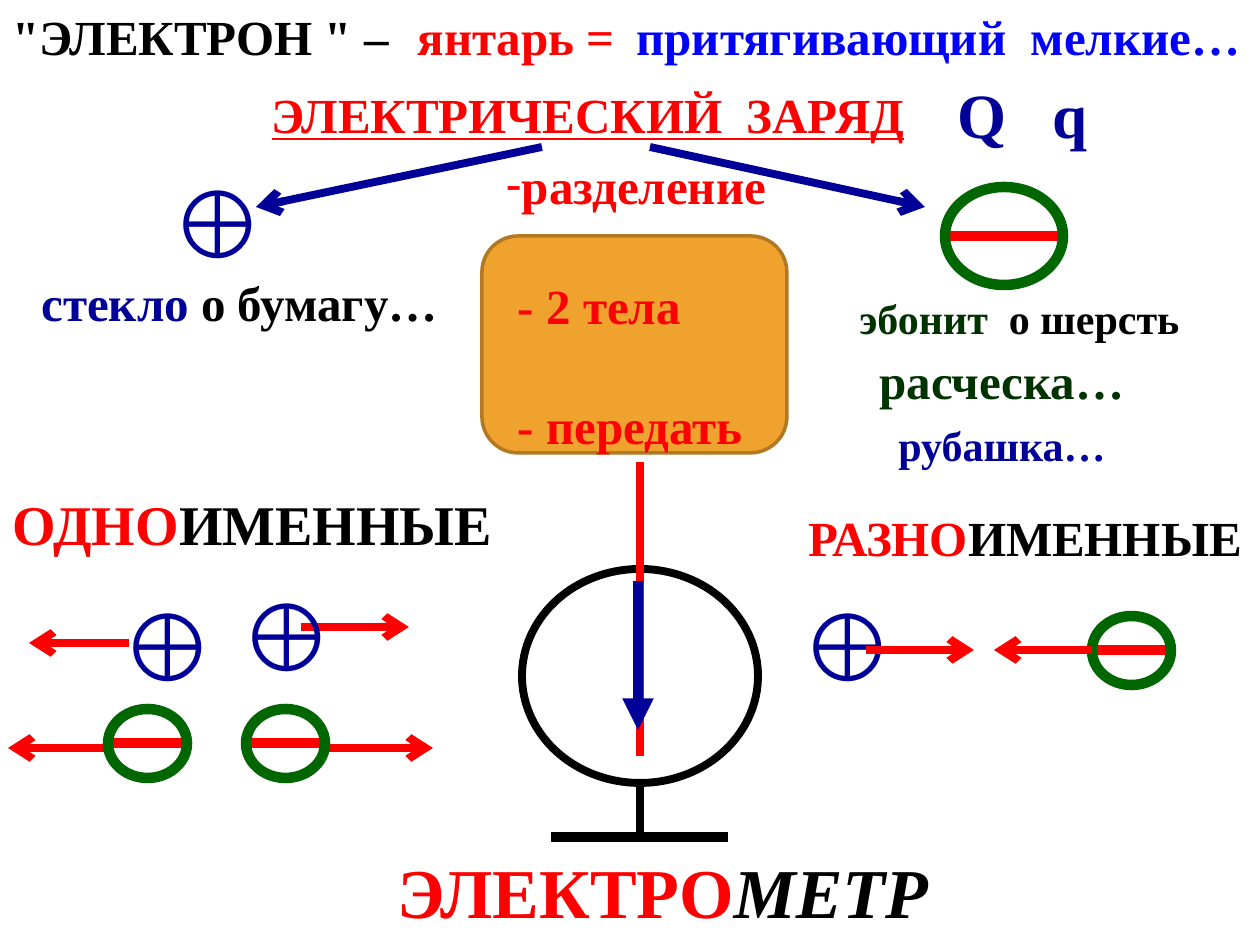
"""Build a slide on electric charge, its two signs and the electrometer."""
from dataclasses import dataclass

from lxml.etree import SubElement
from pptx import Presentation
from pptx.dml.color import RGBColor
from pptx.enum.shapes import MSO_CONNECTOR, MSO_SHAPE
from pptx.enum.text import MSO_ANCHOR, MSO_AUTO_SIZE, PP_ALIGN
from pptx.oxml.ns import qn
from pptx.util import Inches, Pt


@dataclass(frozen=True)
class Theme:
    font: str = "Times New Roman"
    black: str = "000000"
    red: str = "FF0000"
    blue: str = "0000FF"
    navy: str = "000099"
    green: str = "006600"
    forest: str = "003300"
    amber: str = "F0A22E"
    bronze: str = "B27822"
    small: int = 24
    text: int = 28
    group: int = 32
    symbol: int = 36
    device: int = 40
    charge: int = 54
    thin: float = 4.5
    thick: float = 6


theme = Theme()
PX = 7257


def write(paragraph, size, *runs):
    paragraph.font.name = theme.font
    paragraph.font.size = Pt(size)
    paragraph.font.bold = True
    paragraph.line_spacing = 1.0
    paragraph.space_before = Pt(0)
    for words, color in runs:
        run = paragraph.add_run()
        run.text = words
        run.font.color.rgb = RGBColor.from_string(color)


def stroke(parent, x1, y1, x2, y2, color, width, head=None):
    line = parent.add_connector(
        MSO_CONNECTOR.STRAIGHT, x1 * PX, y1 * PX, x2 * PX, y2 * PX)
    line.line.color.rgb = RGBColor.from_string(color)
    line.line.width = Pt(width)
    if head:
        SubElement(line.line._get_or_add_ln(), qn("a:tailEnd"), type=head)
    SubElement(line.element.spPr, qn("a:effectLst"))


presentation = Presentation()
presentation.slide_width = Inches(10)
presentation.slide_height = Inches(7.5)
slide = presentation.slides.add_slide(presentation.slide_layouts[1])
shapes = slide.shapes
title, methods = slide.placeholders

for placeholder, (left, top, width, height) in (
        (title, (235, 78, 706, 72)), (methods, (493, 154, 335, 302))):
    placeholder.left, placeholder.top = left * PX, top * PX
    placeholder.width, placeholder.height = width * PX, height * PX
    placeholder.text_frame.auto_size = MSO_AUTO_SIZE.NONE
    placeholder.text_frame.vertical_anchor = MSO_ANCHOR.MIDDLE

heading = title.text_frame.paragraphs[0]
write(heading, theme.text, ("ЭЛЕКТРИЧЕСКИЙ  ЗАРЯД", theme.red))
heading.font.underline = True
heading.alignment = PP_ALIGN.CENTER

for row, method in enumerate(("разделение", " - 2 тела", " - передать")):
    item = methods.text_frame.paragraphs[0] if row == 0 else methods.text_frame.add_paragraph()
    write(item, theme.text, (method, theme.red))
    item.space_before = Pt(35 if row else 0)
    properties = item._p.get_or_add_pPr()
    properties.set("marL", "0")
    properties.set("indent", "0")
    bullet = properties.makeelement(qn("a:buNone" if row else "a:buChar"))
    if row == 0:
        bullet.set("char", "-")
    properties.find(qn("a:defRPr")).addprevious(bullet)

panel = shapes.add_shape(
    MSO_SHAPE.ROUNDED_RECTANGLE, 482 * PX, 236 * PX, 305 * PX, 217 * PX)
panel.shadow.inherit = False
panel.fill.solid()
panel.fill.fore_color.rgb = RGBColor.from_string(theme.amber)
panel.line.color.rgb = RGBColor.from_string(theme.bronze)
panel.line.width = Pt(2)
methods.element.addprevious(panel.element)

for left, top, width, height, size, *runs in (
        (0, 0, 406, 72, theme.text, ("\"ЭЛЕКТРОН \" –", theme.black)),
        (393, 0, 237, 72, theme.text, (" янтарь =", theme.red)),
        (624, 0, 636, 72, theme.text, ("притягивающий  мелкие…", theme.blue)),
        (945, 69, 74, 89, theme.symbol, ("Q", theme.navy)),
        (1024, 69, 77, 89, theme.symbol, (" q", theme.navy)),
        (29, 266, 438, 72, theme.text,
         ("стекло", theme.navy), (" о бумагу…", theme.black)),
        (847, 286, 349, 63, theme.small,
         ("эбонит ", theme.forest), (" о шерсть", theme.black)),
        (867, 344, 273, 72, theme.text, ("расческа…", theme.forest)),
        (886, 413, 234, 63, theme.small, ("рубашка…", theme.navy)),
        (0, 483, 510, 81, theme.group,
         ("ОДНО", theme.red), ("ИМЕННЫЕ", theme.black)),
        (796, 501, 464, 72, theme.text,
         ("РАЗНО", theme.red), ("ИМЕННЫЕ", theme.black))):
    caption = shapes.add_textbox(left * PX, top * PX, width * PX, height * PX).text_frame
    caption.word_wrap = False
    write(caption.paragraphs[0], size, *runs)

device = shapes.add_textbox(368 * PX, 842 * PX, 578 * PX, 97 * PX).text_frame
device.word_wrap = False
write(device.paragraphs[0], theme.device,
      (" ЭЛЕКТРО", theme.red), ("МЕТР", theme.black))
device.paragraphs[0].runs[1].font.italic = True

for start, end in ((542, 256), (650, 925)):
    stroke(shapes, start, 147, end, 207, theme.navy, theme.thin, "arrow")

for start, end, y in ((129, 29, 643), (301, 409, 627), (106, 8, 748), (325, 433, 748)):
    stroke(shapes, start, y, end, y, theme.red, theme.thin, "arrow")

for left, top, width, height in (
        (945, 187, 118, 98), (108, 709, 79, 69), (246, 709, 79, 69), (1092, 616, 79, 69)):
    negative = shapes.add_group_shape().shapes
    middle = top + height // 2
    stroke(negative, left, middle, left + width, middle, theme.red, theme.thick)
    ring = negative.add_shape(
        MSO_SHAPE.OVAL, left * PX, top * PX, width * PX, height * PX)
    ring.shadow.inherit = False
    ring.fill.background()
    ring.line.color.rgb = RGBColor.from_string(theme.green)
    ring.line.width = Pt(theme.thick)

for left, top in ((158, 158), (108, 581), (227, 571), (788, 581)):
    positive = shapes.add_textbox(left * PX, top * PX, 118 * PX, 127 * PX).text_frame
    positive.word_wrap = True
    write(positive.paragraphs[0], theme.charge, ("⊕", theme.navy))

for start, end in ((866, 974), (1092, 994)):
    stroke(shapes, start, 650, end, 650, theme.red, theme.thin, "arrow")

electrometer = shapes.add_group_shape().shapes
dial = electrometer.add_shape(MSO_SHAPE.OVAL, 522 * PX, 569 * PX, 236 * PX, 214 * PX)
dial.shadow.inherit = False
dial.fill.background()
dial.line.color.rgb = RGBColor.from_string(theme.black)
dial.line.width = Pt(theme.thin)
stroke(electrometer, 640, 783, 640, 837, theme.black, theme.thin)
stroke(electrometer, 551, 837, 728, 837, theme.black, theme.thick)
stroke(shapes, 640, 462, 640, 756, theme.red, theme.thin)
stroke(shapes, 638, 581, 638, 730, theme.navy, theme.thick, "triangle")

presentation.save("out.pptx")
